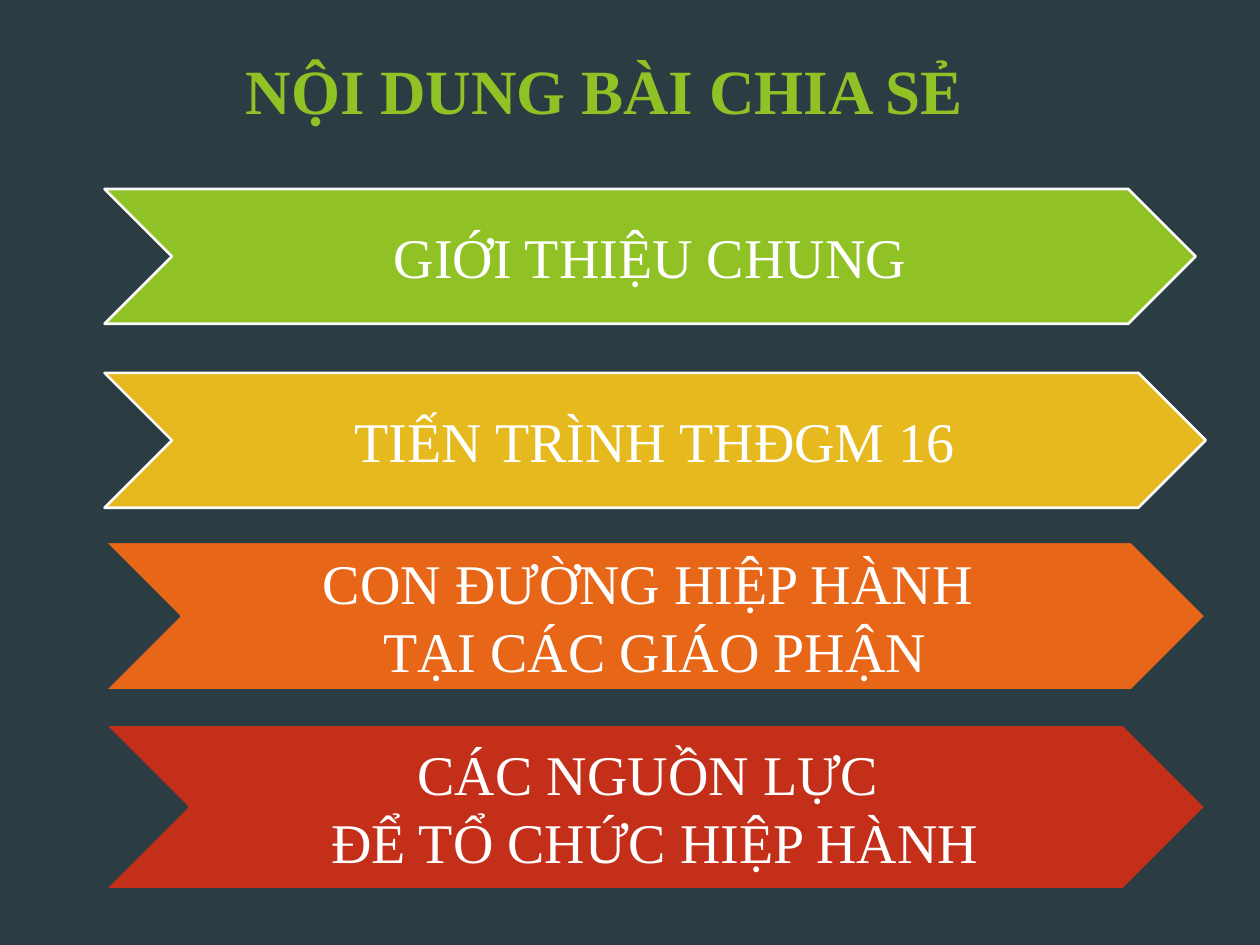
import pptx
import pptx.util
import pptx.dml.color
import pptx.enum.shapes
import pptx.enum.text

Inches, Pt = pptx.util.Inches, pptx.util.Pt
RGB = pptx.dml.color.RGBColor
ALIGN, ANCHOR = pptx.enum.text.PP_ALIGN, pptx.enum.text.MSO_ANCHOR

DARK = RGB(0x2C, 0x3C, 0x43)
GREEN = RGB(0x90, 0xC2, 0x26)
GOLD = RGB(0xE6, 0xB9, 0x1E)
ORANGE = RGB(0xE7, 0x66, 0x18)
RED = RGB(0xC4, 0x2F, 0x1A)
PALE = RGB(0xFB, 0xFB, 0xFB)
WHITE = RGB(0xFF, 0xFF, 0xFF)

TITLE = "NỘI DUNG BÀI CHIA SẺ"
LEFT = 0.83
# text, top, width, height, fill, line; \v is a line break
STEPS = [
    ("GIỚI THIỆU CHUNG", 1.5, 8.66, 1.07, GREEN, PALE),
    ("TIẾN TRÌNH THĐGM 16", 2.96, 8.74, 1.07, GOLD, PALE),
    ("CON ĐƯỜNG HIỆP HÀNH \vTẠI CÁC GIÁO PHẬN", 4.3, 8.74, 1.18, ORANGE, DARK),
    ("CÁC NGUỒN LỰC \vĐỂ TỔ CHỨC HIỆP HÀNH", 5.75, 8.74, 1.31, RED, DARK),
]
HEAD = {"name": "Times New Roman", "size": Pt(36), "bold": True}
BODY = {"name": "Times New Roman", "size": Pt(32), "bold": False}


def write(shape, text, font, color, align, anchor):
    frame = shape.text_frame
    frame.text = text
    frame.word_wrap = True
    frame.auto_size = pptx.enum.text.MSO_AUTO_SIZE.NONE
    frame.vertical_anchor = anchor
    para = frame.paragraphs[0]
    para.alignment = align
    for run in para.runs:
        for key, value in font.items():
            setattr(run.font, key, value)
        run.font.color.rgb = color


def add_step(slide, text, top, width, height, fill, line):
    shape = slide.shapes.add_shape(
        pptx.enum.shapes.MSO_SHAPE.CHEVRON,
        Inches(LEFT), Inches(top), Inches(width), Inches(height))
    shape.shadow.inherit = False
    shape.fill.solid()
    shape.fill.fore_color.rgb = fill
    shape.line.color.rgb = line
    shape.line.width = Pt(1.5)
    write(shape, text, BODY, WHITE, ALIGN.CENTER, ANCHOR.MIDDLE)


def main():
    deck = pptx.Presentation()
    deck.slide_width, deck.slide_height = Inches(10), Inches(7.5)
    slide = deck.slides.add_slide(deck.slide_layouts[5])
    slide.background.fill.solid()
    slide.background.fill.fore_color.rgb = DARK

    title = slide.shapes.title
    title.left, title.top = Inches(1.85), Inches(0.36)
    title.width, title.height = Inches(6.94), Inches(1.44)
    write(title, TITLE, HEAD, GREEN, ALIGN.LEFT, ANCHOR.TOP)

    for step in STEPS:
        add_step(slide, *step)
    deck.save("out.pptx")


if __name__ == "__main__":
    main()
